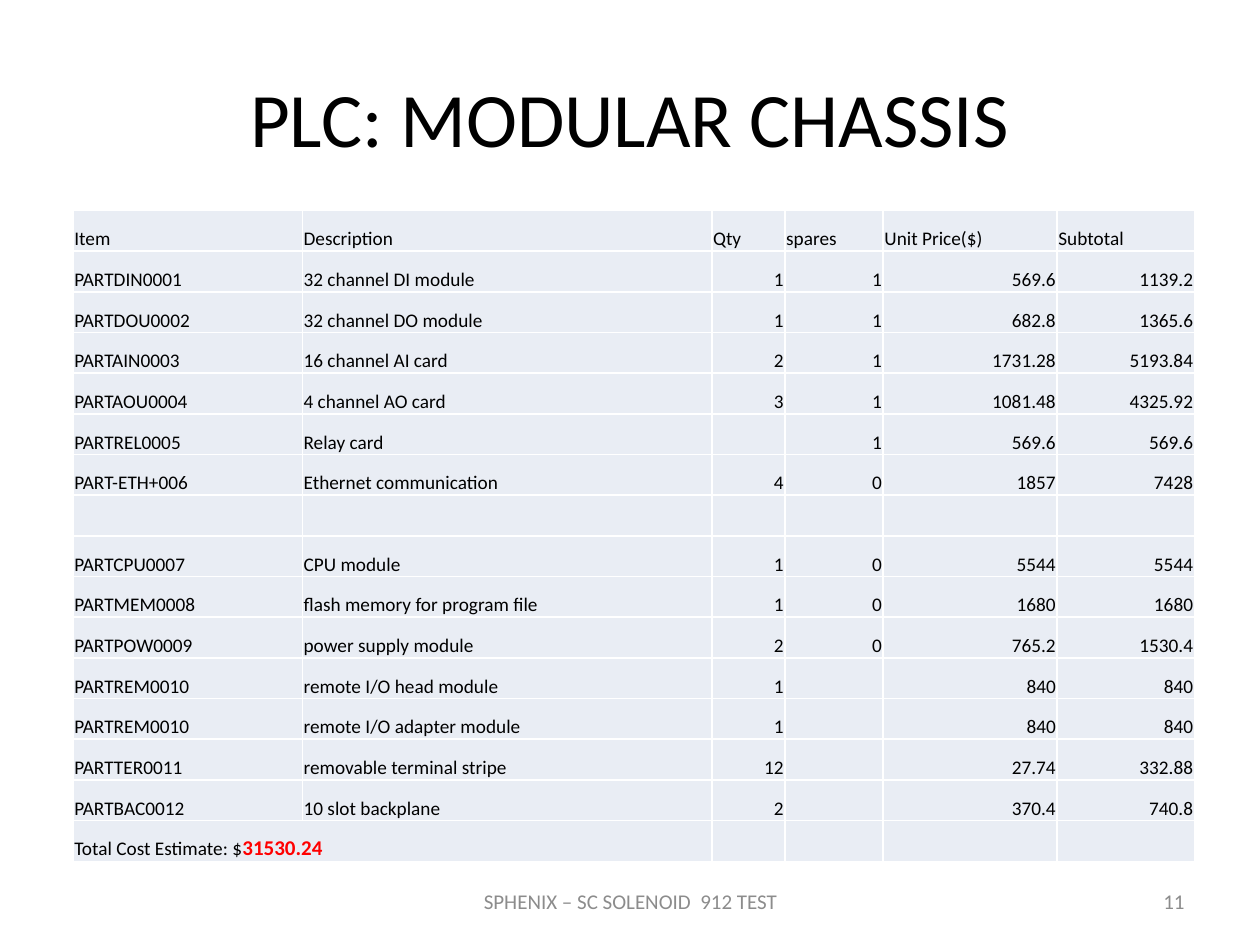
from lxml import etree
from pptx import Presentation
from pptx.dml.color import RGBColor
from pptx.enum import text
from pptx.oxml import ns
from pptx.util import Inches, Pt

FONT = "Calibri"
BLACK, GREY, RED, WHITE, PALE = "000000", "8C8C8C", "FF0000", "FFFFFF", "E9EDF4"
LEFT, CENTER, RIGHT = text.PP_ALIGN.LEFT, text.PP_ALIGN.CENTER, text.PP_ALIGN.RIGHT

LABELS = [
    ("PLC: MODULAR CHASSIS", (0.5, 0.3, 9, 1.25), 44, BLACK, CENTER),
    ("SPHENIX – SC SOLENOID  912 TEST", (3.42, 6.95, 3.17, 0.4), 12, GREY, CENTER),
    ("11", (7.17, 6.95, 2.33, 0.4), 12, GREY, RIGHT),
]
COLUMN_WIDTHS = [1.82, 3.25, 0.58, 0.78, 1.38, 1.09]
TABLE_LEFT, TABLE_TOP, TABLE_HEIGHT = 0.58, 1.67, 5.17
ROWS = [
    ("Item", "Description", "Qty", "spares", "Unit Price($)", "Subtotal"),
    ("PARTDIN0001", "32 channel DI module", "1", "1", "569.6", "1139.2"),
    ("PARTDOU0002", "32 channel DO module", "1", "1", "682.8", "1365.6"),
    ("PARTAIN0003", "16 channel AI card", "2", "1", "1731.28", "5193.84"),
    ("PARTAOU0004", "4 channel AO card", "3", "1", "1081.48", "4325.92"),
    ("PARTREL0005", "Relay card", "", "1", "569.6", "569.6"),
    ("PART-ETH+006", "Ethernet communication", "4", "0", "1857", "7428"),
    ("", "", "", "", "", ""),
    ("PARTCPU0007", "CPU module", "1", "0", "5544", "5544"),
    ("PARTMEM0008", "flash memory for program file", "1", "0", "1680", "1680"),
    ("PARTPOW0009", "power supply module", "2", "0", "765.2", "1530.4"),
    ("PARTREM0010", "remote I/O head module", "1", "", "840", "840"),
    ("PARTREM0010", "remote I/O adapter module", "1", "", "840", "840"),
    ("PARTTER0011", "removable terminal stripe", "12", "", "27.74", "332.88"),
    ("PARTBAC0012", "10 slot backplane", "2", "", "370.4", "740.8"),
    ("Total Cost Estimate: $", "", "", "", "", ""),
]
TOTAL = "31530.24"


def color(value):
    return RGBColor.from_string(value)


def style(font, size, value):
    font.name, font.size = FONT, Pt(size)
    font.color.rgb = color(value)


def add_label(slide, wording, box, size, value, alignment):
    frame = slide.shapes.add_textbox(*map(Inches, box)).text_frame
    frame.word_wrap = True
    frame.vertical_anchor = text.MSO_ANCHOR.MIDDLE
    paragraph = frame.paragraphs[0]
    paragraph.text, paragraph.alignment = wording, alignment
    style(paragraph.font, size, value)


def add_borders(cell):
    properties = cell._tc.get_or_add_tcPr()
    for index, side in enumerate(("lnL", "lnR", "lnT", "lnB")):
        line = etree.Element(ns.qn(f"a:{side}"), w=str(Pt(1)))
        fill = etree.SubElement(line, ns.qn("a:solidFill"))
        etree.SubElement(fill, ns.qn("a:srgbClr"), val=WHITE)
        properties.insert(index, line)


def fill_cell(cell, wording, alignment):
    cell.margin_left = cell.margin_right = cell.margin_top = Inches(0.01)
    cell.margin_bottom = 0
    cell.vertical_anchor = text.MSO_ANCHOR.BOTTOM
    cell.fill.solid()
    cell.fill.fore_color.rgb = color(PALE)
    add_borders(cell)
    paragraph = cell.text_frame.paragraphs[0]
    paragraph.text, paragraph.alignment = wording, alignment
    style(paragraph.font, 11, BLACK)


def add_cost_table(slide):
    table = slide.shapes.add_table(
        len(ROWS), len(COLUMN_WIDTHS), Inches(TABLE_LEFT), Inches(TABLE_TOP),
        Inches(sum(COLUMN_WIDTHS)), Inches(TABLE_HEIGHT)).table
    table.first_row = table.horz_banding = False
    for column, width in zip(table.columns, COLUMN_WIDTHS):
        column.width = Inches(width)
    for row_index, row in enumerate(ROWS):
        table.rows[row_index].height = Inches(TABLE_HEIGHT / len(ROWS))
        for column_index, wording in enumerate(row):
            numeric = row_index > 0 and column_index > 1
            fill_cell(table.cell(row_index, column_index), wording, RIGHT if numeric else LEFT)

    last = len(ROWS) - 1
    total_cell = table.cell(last, 0)
    total_cell.merge(table.cell(last, 1))
    total = total_cell.text_frame.paragraphs[0].add_run()
    total.text = TOTAL
    style(total.font, 12, RED)
    total.font.bold = True


def main():
    presentation = Presentation()
    presentation.slide_width, presentation.slide_height = Inches(10), Inches(7.5)
    slide = presentation.slides.add_slide(presentation.slide_layouts[6])
    for label in LABELS:
        add_label(slide, *label)
    add_cost_table(slide)
    presentation.save("out.pptx")


if __name__ == "__main__":
    main()
